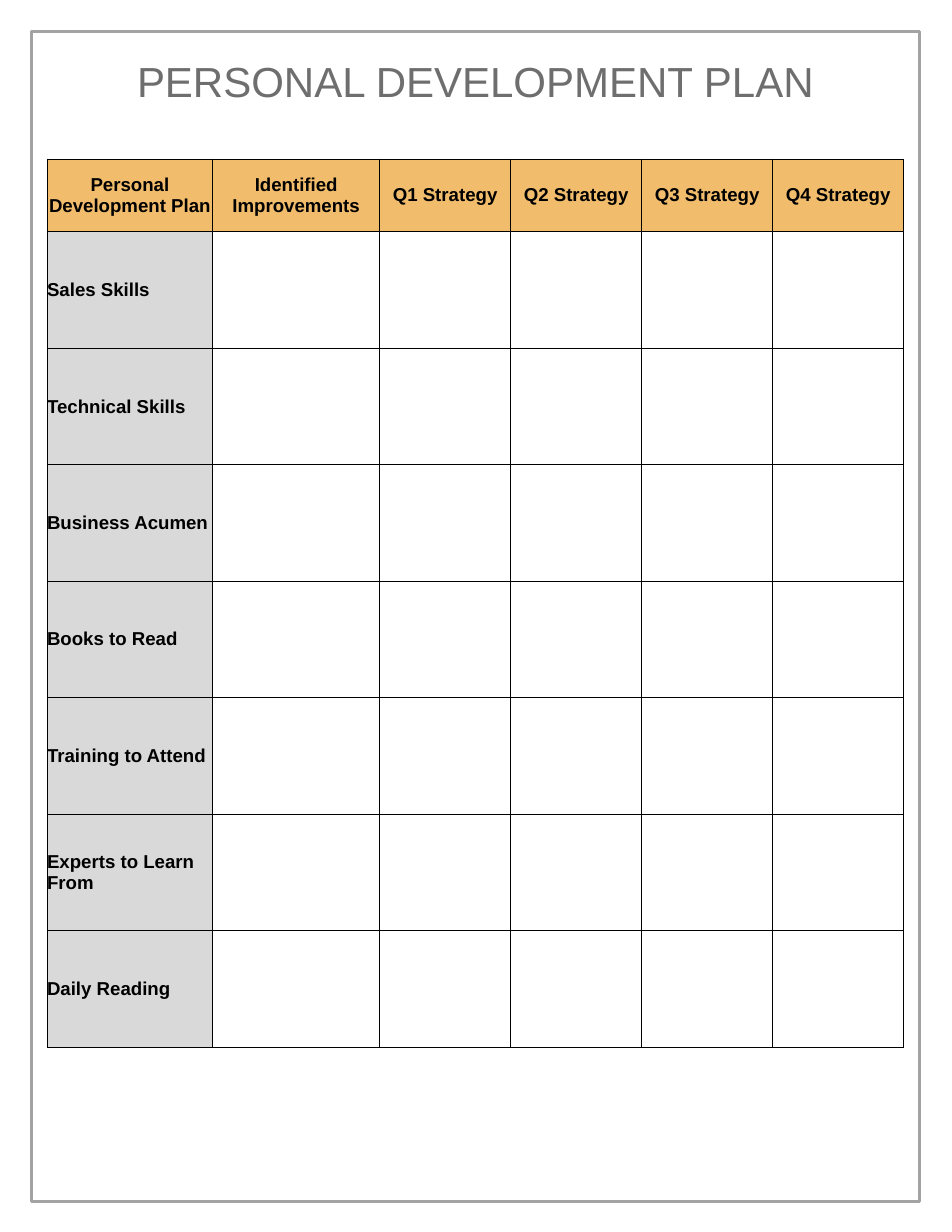
"""Build a one-page personal development plan with a quarterly strategy table."""
from lxml.etree import SubElement
from pptx import Presentation
from pptx.dml.color import RGBColor
from pptx.enum.shapes import MSO_SHAPE
from pptx.enum.text import MSO_ANCHOR, PP_ALIGN
from pptx.oxml.ns import qn
from pptx.util import Inches, Pt

TITLE = "PERSONAL DEVELOPMENT PLAN"
HEADERS = ["Personal Development Plan", "Identified Improvements"] + [
    f"Q{n} Strategy" for n in range(1, 5)
]
TOPICS = [
    "Sales Skills",
    "Technical Skills",
    "Business Acumen",
    "Books to Read",
    "Training to Attend",
    "Experts to Learn From",
    "Daily Reading",
]
COL_WIDTHS = [1.48, 1.49] + [1.17] * 4
ROW_HEIGHTS = [0.65] + [1.04] * len(TOPICS)

THEME = {
    "font": "Arial",
    "title_size": 27,
    "cell_size": 12,
    "title": "6E6E6E",
    "text": "000000",
    "frame": "A3A3A3",
    "header": "F1BD6D",
    "topic": "D9D9D9",
    "grid": "000000",
}


def color(name):
    """Return a theme colour."""
    return RGBColor.from_string(THEME[name])


def set_text(p, text, size, col, align, bold=False):
    """Fill and style one paragraph."""
    p.text = text
    p.alignment = align
    p.font.name = THEME["font"]
    p.font.size = Pt(THEME[size])
    p.font.bold = bold
    p.font.color.rgb = color(col)


def add_frame(s):
    """Draw the page frame."""
    sp = s.shapes.add_shape(
        MSO_SHAPE.RECTANGLE, Inches(0.28), Inches(0.28), Inches(7.93), Inches(10.45)
    )
    sp.shadow.inherit = False
    sp.fill.background()
    sp.line.color.rgb = color("frame")
    sp.line.width = Pt(2)


def add_title(s):
    """Write the page title."""
    tf = s.shapes.add_textbox(
        Inches(0.42), Inches(0.44), Inches(7.65), Inches(1.03)
    ).text_frame
    tf.word_wrap = True
    tf.margin_left = tf.margin_right = Inches(0.11)
    tf.margin_top = tf.margin_bottom = Inches(0.06)
    set_text(tf.paragraphs[0], TITLE, "title_size", "title", PP_ALIGN.CENTER)


def style_cell(cell, fill):
    """Set the borders, margins and fill of a cell."""
    tc_pr = cell._tc.get_or_add_tcPr()
    for side in ("lnL", "lnR", "lnT", "lnB"):
        ln = SubElement(tc_pr, qn(f"a:{side}"), w=str(Pt(0.5)))
        solid = SubElement(ln, qn("a:solidFill"))
        SubElement(solid, qn("a:srgbClr"), val=THEME["grid"])
    cell.margin_left = cell.margin_right = cell.margin_top = cell.margin_bottom = 0
    cell.vertical_anchor = MSO_ANCHOR.MIDDLE
    if fill:
        cell.fill.solid()
        cell.fill.fore_color.rgb = color(fill)
    else:
        cell.fill.background()


def add_plan(s):
    """Add the plan table."""
    table = s.shapes.add_table(
        len(ROW_HEIGHTS), len(COL_WIDTHS), Inches(0.42), Inches(1.42),
        Inches(sum(COL_WIDTHS)), Inches(sum(ROW_HEIGHTS)),
    ).table
    table.first_row = table.horz_banding = False
    for col, width in zip(table.columns, COL_WIDTHS):
        col.width = Inches(width)
    for row, height in zip(table.rows, ROW_HEIGHTS):
        row.height = Inches(height)

    rows = [HEADERS] + [[topic] + [""] * (len(HEADERS) - 1) for topic in TOPICS]
    for i, row in enumerate(rows):
        fill = "topic" if i else "header"
        align = PP_ALIGN.LEFT if i else PP_ALIGN.CENTER
        for j, text in enumerate(row):
            cell = table.cell(i, j)
            style_cell(cell, fill if text else None)
            if text:
                p = cell.text_frame.paragraphs[0]
                set_text(p, text, "cell_size", "text", align, bold=True)


def main():
    """Build and save the page."""
    prs = Presentation()
    prs.slide_width, prs.slide_height = Inches(8.5), Inches(11)
    s = prs.slides.add_slide(prs.slide_layouts[6])
    add_frame(s)
    add_title(s)
    add_plan(s)
    prs.save("out.pptx")


if __name__ == "__main__":
    main()
